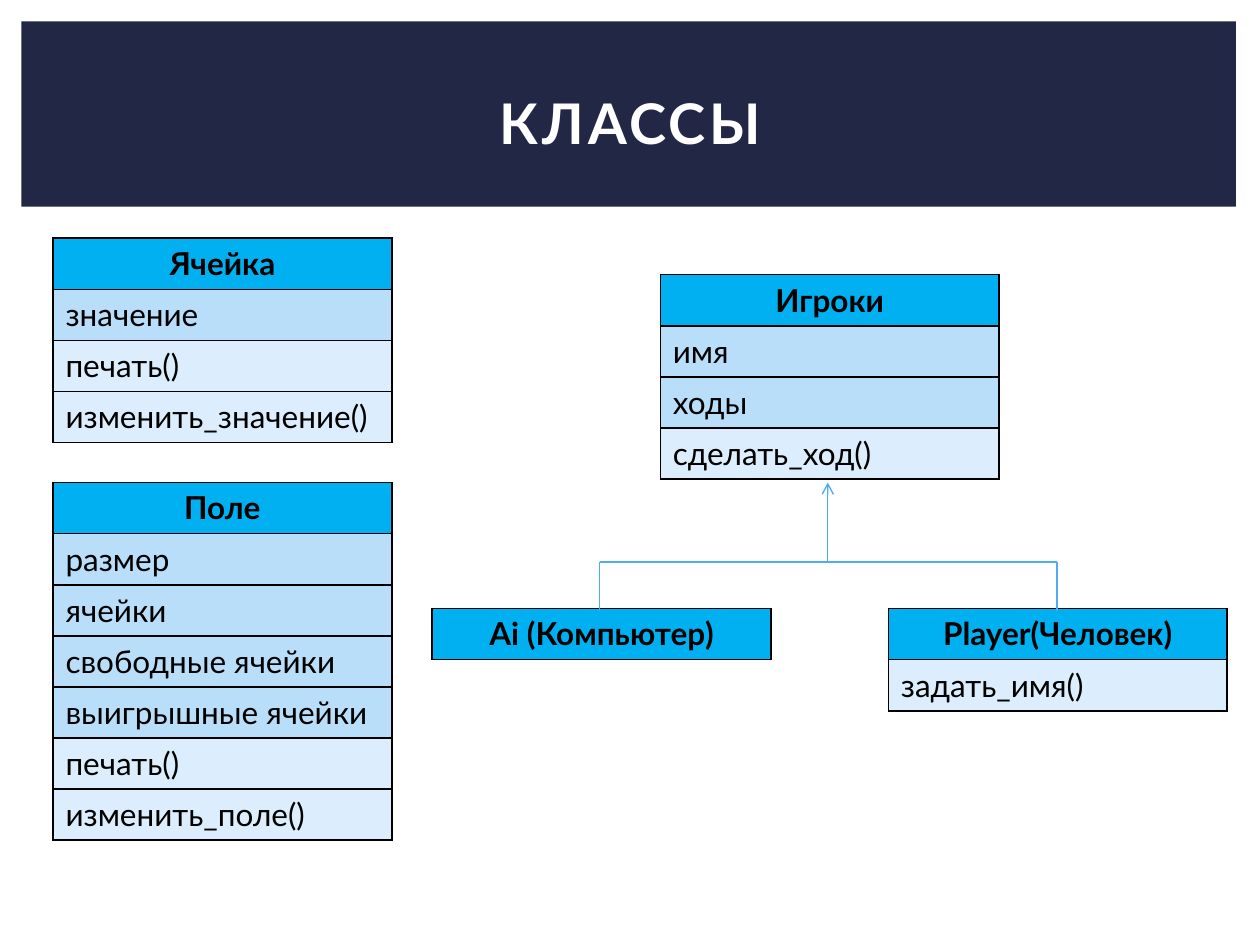
import pptx
import pptx.dml.color
import pptx.enum.shapes
import pptx.enum.text
import pptx.oxml
import pptx.oxml.ns
import pptx.util

WIDTH, HEIGHT = pptx.util.Inches(10), pptx.util.Inches(7.5)
ROW = pptx.util.Pt(29.2)
CLASS_WIDTH = pptx.util.Inches(2.69)
HEADER, FIELD, METHOD = "00B0F0", "B9DEFA", "DCEEFD"
INK, LINK = "000000", "4FACF3"

# Left, top, class name, fields, methods
CLASSES = [
    (0.42, 1.89, "Ячейка", ["значение"], ["печать()", "изменить_значение()"]),
    (0.42, 3.83, "Поле",
     ["размер", "ячейки", "свободные ячейки", "выигрышные ячейки"],
     ["печать()", "изменить_поле()"]),
    (5.24, 2.18, "Игроки", ["имя", "ходы"], ["сделать_ход()"]),
    (3.43, 4.83, "Ai (Компьютер)", [], []),
    (7.05, 4.83, "Player(Человек)", [], ["задать_имя()"]),
]

# Start, end, whether the end has an arrowhead
INHERITANCE = [
    ((4.76, 4.85), (4.76, 4.46), False),
    ((4.76, 4.46), (8.39, 4.46), False),
    ((8.39, 4.85), (8.39, 4.46), False),
    ((6.57, 4.46), (6.57, 3.83), True),
]


def color(value):
    return pptx.dml.color.RGBColor.from_string(value)


def paint(fill, value):
    fill.solid()
    fill.fore_color.rgb = color(value)


def format_font(font, value, **settings):
    for name, setting in {"name": "Lato", **settings}.items():
        setattr(font, name, setting)
    font.color.rgb = color(value)


def add_banner(slide):
    banner = slide.shapes.add_shape(
        pptx.enum.shapes.MSO_SHAPE.RECTANGLE,
        *map(pptx.util.Inches, (0.17, 0.17, 9.64, 1.47)))
    banner.shadow.inherit = False
    paint(banner.fill, "212745")
    banner.line.fill.background()
    slide.shapes.title.element.addprevious(banner.element)


def set_title(slide, text):
    title = slide.shapes.title
    place = dict(left=0.42, top=0.39, width=9.17, height=1.15)
    for side, inches in place.items():
        setattr(title, side, pptx.util.Inches(inches))
    title.text_frame.vertical_anchor = pptx.enum.text.MSO_ANCHOR.MIDDLE
    paragraph = title.text_frame.paragraphs[0]
    paragraph.alignment = pptx.enum.text.PP_ALIGN.CENTER
    run = paragraph.add_run()
    run.text = text
    format_font(run.font, "FFFFFF", size=pptx.util.Pt(32), bold=True)
    run.font._element.set("spc", "200")


def add_borders(cell):
    properties = cell._tc.get_or_add_tcPr()
    for side in "LRTB":
        properties.append(pptx.oxml.parse_xml(
            f'<a:ln{side} {pptx.oxml.ns.nsdecls("a")} w="12700"><a:solidFill>'
            f'<a:srgbClr val="{INK}"/></a:solidFill></a:ln{side}>'))


def add_class(slide, left, top, name, fields, methods):
    """Draw a class as a table: its name, then fields, then methods."""
    rows = ([(name, HEADER)] + [(field, FIELD) for field in fields]
            + [(method, METHOD) for method in methods])
    table = slide.shapes.add_table(
        len(rows), 1, pptx.util.Inches(left), pptx.util.Inches(top),
        CLASS_WIDTH, ROW * len(rows)).table
    for index, (text, fill) in enumerate(rows):
        table.rows[index].height = ROW
        cell = table.cell(index, 0)
        add_borders(cell)
        paint(cell.fill, fill)
        paragraph = cell.text_frame.paragraphs[0]
        is_name = index == 0
        if is_name:
            paragraph.alignment = pptx.enum.text.PP_ALIGN.CENTER
        run = paragraph.add_run()
        run.text = text
        format_font(run.font, INK, size=pptx.util.Pt(18), bold=is_name)


def add_link(slide, start, end, arrow):
    link = slide.shapes.add_connector(
        pptx.enum.shapes.MSO_CONNECTOR.STRAIGHT,
        *map(pptx.util.Inches, start + end))
    link.line.color.rgb = color(LINK)
    link.line.width = pptx.util.Pt(0.79)
    namespace = pptx.oxml.ns.nsdecls("a")
    if arrow:
        link.line._get_or_add_ln().append(
            pptx.oxml.parse_xml(f'<a:tailEnd {namespace} type="arrow"/>'))
    link._element.spPr.append(pptx.oxml.parse_xml(f"<a:effectLst {namespace}/>"))


def main():
    deck = pptx.Presentation()
    deck.slide_width, deck.slide_height = WIDTH, HEIGHT
    slide = deck.slides.add_slide(deck.slide_layouts.get_by_name("Title Only"))
    add_banner(slide)
    set_title(slide, "КЛАССЫ")
    for box in CLASSES:
        add_class(slide, *box)
    for link in INHERITANCE:
        add_link(slide, *link)
    deck.save("out.pptx")


if __name__ == "__main__":
    main()
